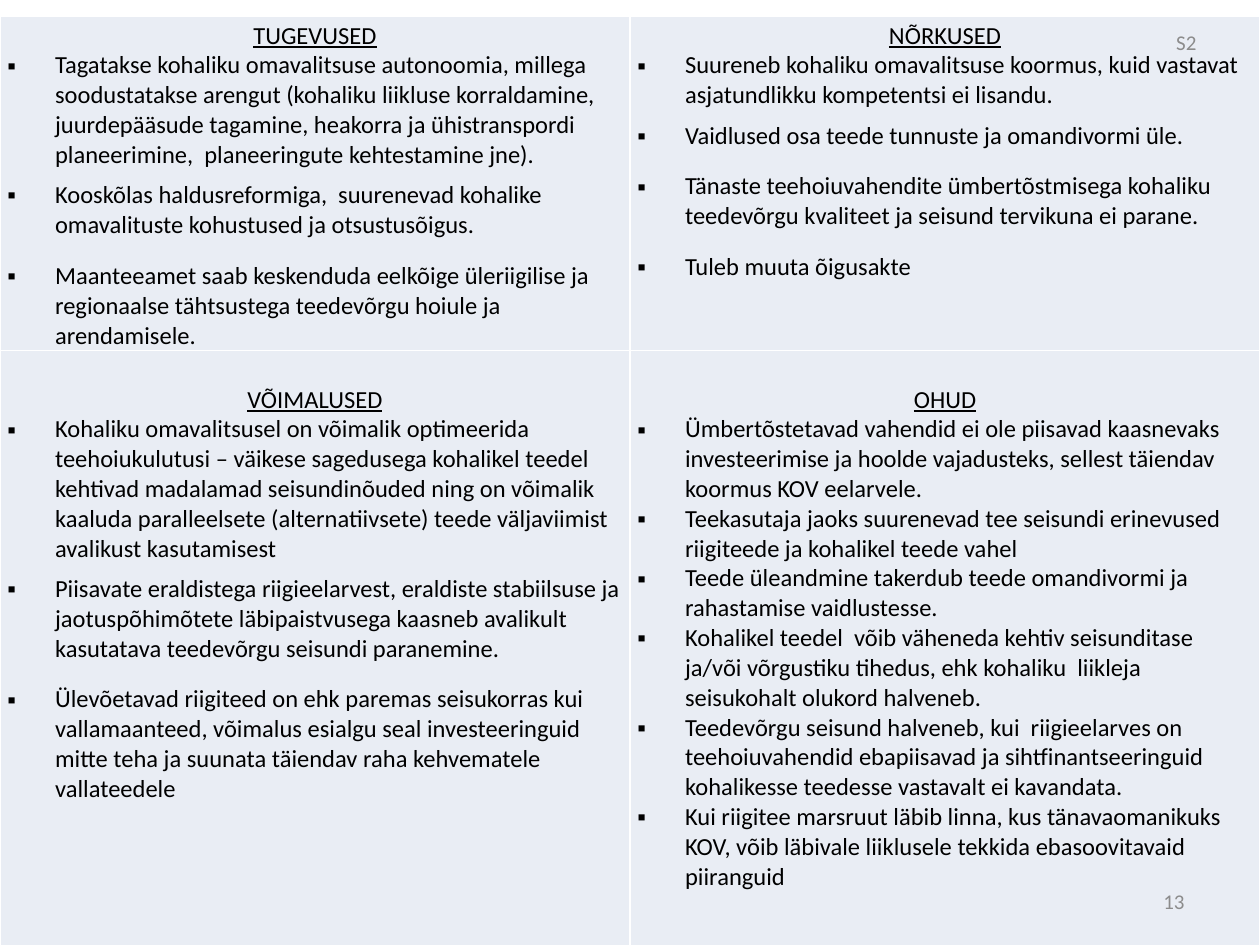
from dataclasses import dataclass

from lxml.etree import SubElement
from pptx import Presentation
from pptx.dml.color import RGBColor as RGB
from pptx.enum.text import MSO_ANCHOR as Anchor, PP_ALIGN as Align
from pptx.oxml.ns import qn
from pptx.util import Cm, Pt


@dataclass(frozen=True)
class Theme:
    font: str = "Calibri"
    body: int = 14
    small: int = 12
    ink: str = "000000"
    muted: str = "8C8C8C"
    fill: str = "E9EDF4"
    rule: str = "FFFFFF"


THEME = Theme()

# Each quarter: heading, whether its items are spaced apart, items
SWOT = [
    [
        ("TUGEVUSED", True, [
            "Tagatakse kohaliku omavalitsuse autonoomia, millega soodustatakse arengut "
            "(kohaliku liikluse korraldamine, juurdepääsude tagamine, heakorra ja "
            "ühistranspordi planeerimine,  planeeringute kehtestamine jne).",
            "Kooskõlas haldusreformiga,  suurenevad kohalike omavalituste kohustused "
            "ja otsustusõigus.",
            "Maanteeamet saab keskenduda eelkõige üleriigilise ja regionaalse "
            "tähtsustega teedevõrgu hoiule ja arendamisele.",
        ]),
        ("NÕRKUSED", True, [
            "Suureneb kohaliku omavalitsuse koormus, kuid vastavat asjatundlikku "
            "kompetentsi ei lisandu.",
            "Vaidlused osa teede tunnuste ja omandivormi üle.",
            "Tänaste teehoiuvahendite ümbertõstmisega kohaliku teedevõrgu kvaliteet "
            "ja seisund tervikuna ei parane.",
            "Tuleb muuta õigusakte",
        ]),
    ],
    [
        ("VÕIMALUSED", True, [
            "Kohaliku omavalitsusel on võimalik optimeerida teehoiukulutusi – väikese "
            "sagedusega kohalikel teedel kehtivad madalamad seisundinõuded ning on "
            "võimalik kaaluda paralleelsete (alternatiivsete) teede väljaviimist "
            "avalikust kasutamisest",
            "Piisavate eraldistega riigieelarvest, eraldiste stabiilsuse ja "
            "jaotuspõhimõtete läbipaistvusega kaasneb avalikult kasutatava teedevõrgu "
            "seisundi paranemine.",
            "Ülevõetavad riigiteed on ehk paremas seisukorras kui vallamaanteed, "
            "võimalus esialgu seal investeeringuid mitte teha ja suunata täiendav raha "
            "kehvematele vallateedele",
        ]),
        ("OHUD", False, [
            "Ümbertõstetavad vahendid ei ole piisavad kaasnevaks investeerimise ja "
            "hoolde vajadusteks, sellest täiendav koormus KOV eelarvele.",
            "Teekasutaja jaoks suurenevad tee seisundi erinevused riigiteede ja "
            "kohalikel teede vahel",
            "Teede üleandmine takerdub teede omandivormi ja rahastamise vaidlustesse.",
            "Kohalikel teedel  võib väheneda kehtiv seisunditase ja/või võrgustiku "
            "tihedus, ehk kohaliku  liikleja seisukohalt olukord halveneb.",
            "Teedevõrgu seisund halveneb, kui  riigieelarves on teehoiuvahendid "
            "ebapiisavad ja sihtfinantseeringuid kohalikesse teedesse vastavalt ei "
            "kavandata.",
            "Kui riigitee marsruut läbib linna, kus tänavaomanikuks KOV, võib läbivale "
            "liiklusele tekkida ebasoovitavaid piiranguid",
        ]),
    ],
]


def add_run(para, text, size, color, under=False):
    run = para.add_run()
    run.text = text
    font = run.font
    font.name, font.size, font.underline = THEME.font, Pt(size), under
    font.color.rgb = RGB.from_string(color)


def set_bullet(para):
    props = para._p.get_or_add_pPr()
    props.set("marL", str(Cm(0.96)))
    props.set("indent", str(-Cm(0.96)))
    SubElement(props, qn("a:buFont")).set("typeface", "Arial")
    SubElement(props, qn("a:buChar")).set("char", "▪")


def set_edges(cell):
    props = cell._tc.get_or_add_tcPr()
    for side in "LRTB":
        line = SubElement(props, qn(f"a:ln{side}"), w=str(Pt(1)))
        paint = SubElement(line, qn("a:solidFill"))
        SubElement(paint, qn("a:srgbClr")).set("val", THEME.rule)


def fill_cell(cell, quarter, top):
    head, spaced, items = quarter
    set_edges(cell)
    cell.fill.solid()
    cell.fill.fore_color.rgb = RGB.from_string(THEME.fill)
    cell.margin_left = cell.margin_right = Cm(0.15)
    cell.margin_top, cell.margin_bottom = top, 0
    cell.vertical_anchor = Anchor.TOP

    frame = cell.text_frame
    para = frame.paragraphs[0]
    para.alignment, para.line_spacing = Align.CENTER, 1.15
    add_run(para, head, THEME.body, THEME.ink, under=True)
    for i, item in enumerate(items):
        para = frame.add_paragraph()
        para.alignment = Align.LEFT
        gap = Pt(6 if spaced and i else 0)
        para.space_before = para.space_after = gap
        set_bullet(para)
        add_run(para, item, THEME.body, THEME.ink)


def add_swot(slide, left, top, width, heights):
    rows, cols = len(SWOT), len(SWOT[0])
    frame = slide.shapes.add_table(rows, cols, left, top, width, sum(heights))
    table = frame.table
    table.first_row = table.horz_banding = False
    for col in table.columns:
        col.width = width // cols
    for r, quarters in enumerate(SWOT):
        table.rows[r].height = heights[r]
        for c, quarter in enumerate(quarters):
            fill_cell(table.cell(r, c), quarter, Cm(0.6) if r else 0)


def add_label(slide, text, left, top, width, height, align):
    frame = slide.shapes.add_textbox(left, top, width, height).text_frame
    frame.word_wrap = True
    frame.vertical_anchor = Anchor.MIDDLE
    para = frame.paragraphs[0]
    para.alignment = align
    add_run(para, text, THEME.small, THEME.muted)


def main():
    deck = Presentation()
    deck.slide_width, deck.slide_height = Cm(25.4), Cm(19.05)
    slide = deck.slides.add_slide(deck.slide_layouts[6])
    add_swot(slide, 0, Cm(0.33), deck.slide_width, [Cm(6.72), Cm(12)])
    add_label(slide, "S2", Cm(23.09), Cm(0.33), Cm(1.65), Cm(1.02), Align.CENTER)
    add_label(slide, "13", Cm(18.21), Cm(17.65), Cm(5.92), Cm(1.02), Align.RIGHT)
    deck.save("out.pptx")


if __name__ == "__main__":
    main()
